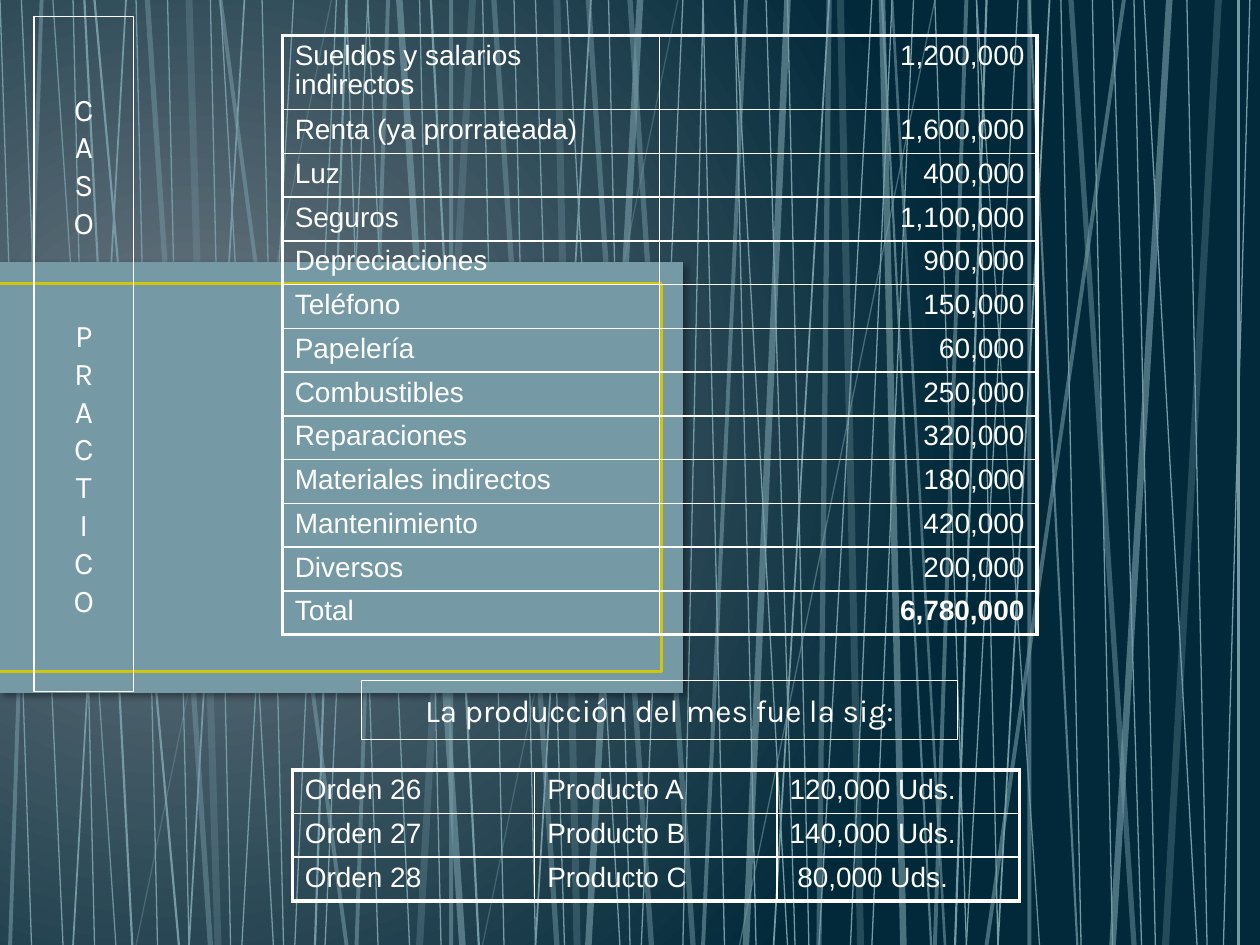
from lxml.etree import SubElement
from pptx import Presentation
from pptx.dml.color import RGBColor
from pptx.enum.shapes import MSO_CONNECTOR as Link, MSO_SHAPE as Shape
from pptx.enum.text import MSO_ANCHOR as Anchor, PP_ALIGN as Align
from pptx.oxml import parse_xml
from pptx.oxml.ns import nsdecls, qn
from pptx.util import Inches, Pt

WHITE = RGBColor(0xFF, 0xFF, 0xFF)
TEAL = RGBColor(0x75, 0x9A, 0xA5)
YELLOW = RGBColor(0xCF, 0xC6, 0x0D)
SLATE = RGBColor(0x71, 0x7C, 0x84)
NAVY = RGBColor(0x01, 0x29, 0x3A)
BLACK = RGBColor(0, 0, 0)

# (width in points, opacity in percent): top and bottom x of each strand
STRANDS = {
    (0.75, 100): [
        (2.08, 2.25), (1.75, 2.17), (2.33, 1.92), (0, 0.25), (0.17, 0.5),
        (1.67, 1.83), (0.58, 0.75), (2.67, 2.34), (2.92, 2.58), (1.08, 1.25),
        (1.33, 1.5), (4.83, 5), (4.5, 4.92), (2.75, 3), (2.92, 3.25),
        (3.33, 3.5), (5.42, 5.09), (5.58, 5.42), (4.25, 4.48), (3.83, 4),
        (4.08, 4.25), (5.83, 6.25), (6.92, 6.5), (6.25, 6.42), (7.25, 6.92),
        (7.08, 6.75), (6.08, 6.31), (5.58, 5.75), (5.83, 6), (7.42, 7.67),
        (7.75, 7.92), (8.42, 8.58), (8.67, 8.83), (9.42, 9.58), (9.08, 9.5),
        (9, 9.17), (9.92, 9.71), (8.83, 9.06), (8.08, 7.67)],
    (0.75, 90): [(0.42, 0.92), (7.75, 8.25)],
    (0.75, 56): [(7.42, 5.87)],
    (0.75, 39): [(2.63, 1.08), (5.38, 3.83)],
    (1, 100): [(1, 0.58), (1.94, 1.5), (4.69, 4.25), (6.58, 6.14),
               (8.33, 7.92)],
    (1.25, 100): [(0.75, 1.42), (0.67, 1.05), (2.75, 2.5), (3.42, 3.8),
                  (7.83, 7.58), (9.83, 9.83)],
    (1.25, 72): [(8.17, 8.55), (7, 7.39)],
    (1.5, 58): [(7.08, 7.5)],
    (2.25, 58): [(0.33, 0.08), (1.75, 2.75), (3.08, 2.83), (3.58, 3.58),
                 (5.92, 5.58), (7.67, 7.42), (8.17, 8.17), (8.92, 7.83)],
    (3, 47): [(1.17, 1.67), (3.92, 4.42), (4.67, 5.17), (8.5, 9),
              (6.58, 6.5), (5, 5.5)],
    (3.75, 63): [(5.08, 4.67), (3.17, 3.67), (9.28, 8.83), (7, 7.17),
                 (6.25, 5.92)],
    (4, 30): [(1.5, 1.73), (3.75, 3.33), (4.42, 4.58), (6.67, 6.83),
              (9.67, 9.25)],
}
COSTS = [
    ("Sueldos y salarios indirectos", "1,200,000"),
    ("Renta (ya prorrateada)", "1,600,000"),
    ("Luz", "400,000"),
    ("Seguros", "1,100,000"),
    ("Depreciaciones", "900,000"),
    ("Teléfono", "150,000"),
    ("Papelería", "60,000"),
    ("Combustibles", "250,000"),
    ("Reparaciones", "320,000"),
    ("Materiales indirectos", "180,000"),
    ("Mantenimiento", "420,000"),
    ("Diversos", "200,000"),
    ("Total", "6,780,000"),
]
ORDERS = [
    ("Orden 26", "Producto A", "120,000 Uds."),
    ("Orden 27", "Producto B", "140,000 Uds."),
    ("Orden 28", "Producto C", " 80,000 Uds."),
]

deck = Presentation()
deck.slide_width, deck.slide_height = Inches(10), Inches(7.5)
slide = deck.slides.add_slide(deck.slide_layouts[6])
shapes = slide.shapes


def draw_line(x1, y1, x2, y2, color, width, alpha=100):
    line = shapes.add_connector(
        Link.STRAIGHT, Inches(x1), Inches(y1), Inches(x2), Inches(y2))
    line.line.color.rgb = color
    line.line.width = Pt(width)
    props = line._element.spPr
    if alpha < 100:
        tint = props.find(".//" + qn("a:srgbClr"))
        SubElement(tint, qn("a:alpha"), val=str(alpha * 1000))
    SubElement(props, qn("a:effectLst"))


def draw_grid(data, left, top, width, heights):
    """Add an unfilled table with a thick frame and thin inner rules."""
    rows, cols = len(data), len(data[0])
    grid = shapes.add_table(rows, cols, Inches(left), Inches(top),
                            Inches(width), Inches(sum(heights))).table
    grid.first_row = grid.horz_banding = False
    for r, texts in enumerate(data):
        grid.rows[r].height = Inches(heights[r])
        for c, text in enumerate(texts):
            cell = grid.cell(r, c)
            cell.text = text
            par = cell.text_frame.paragraphs[0]
            par.line_spacing = 0.95
            par.font.name, par.font.size = "Arial", Pt(16)
            par.font.color.rgb = WHITE
            props = cell._tc.get_or_add_tcPr()
            edges = {"L": c == 0, "R": c == cols - 1,
                     "T": r == 0, "B": r == rows - 1}
            for side, outer in edges.items():
                rule = SubElement(props, qn("a:ln" + side),
                                  w=str(Pt(2.25 if outer else 1)))
                fill = SubElement(rule, qn("a:solidFill"))
                SubElement(fill, qn("a:srgbClr"), val=str(WHITE))
            cell.fill.background()
    return grid


# Background: radial gradient with strands over it
slide._element.cSld.insert(0, parse_xml(
    f'<p:bg {nsdecls("p", "a")}><p:bgPr><a:gradFill rotWithShape="1"><a:gsLst>'
    f'<a:gs pos="0"><a:srgbClr val="{SLATE}"/></a:gs>'
    f'<a:gs pos="100000"><a:srgbClr val="{NAVY}"/></a:gs></a:gsLst>'
    '<a:path path="circle">'
    '<a:fillToRect l="15000" t="50000" r="85000" b="60000"/></a:path>'
    '</a:gradFill><a:effectLst/></p:bgPr></p:bg>'))
for (width, alpha), ends in STRANDS.items():
    for x1, x2 in ends:
        draw_line(x1, 0, x2, 7.5, TEAL, width, alpha)

# Panel with its yellow trim
panel = shapes.add_shape(Shape.RECTANGLE, 0, Inches(2.08),
                         Inches(5.42), Inches(3.42))
panel.fill.solid()
panel.fill.fore_color.rgb = TEAL
panel.line.fill.background()
panel._element.spPr.append(parse_xml(
    f'<a:effectLst {nsdecls("a")}><a:outerShdw blurRad="{Pt(4)}" '
    f'dist="{Pt(3)}" dir="2700000" algn="tl" rotWithShape="0">'
    f'<a:srgbClr val="{BLACK}"><a:alpha val="40000"/></a:srgbClr>'
    '</a:outerShdw></a:effectLst>'))
for trim in [(0, 2.25, 5.25, 2.25), (0, 5.33, 5.25, 5.33),
             (5.25, 2.25, 5.25, 5.33)]:
    draw_line(*trim, YELLOW, 1.5)

# Tables
costs = draw_grid(COSTS, 2.24, 0.28, 5.99, [0.59] + [4.17 / 12] * 12)
for row in costs.rows:
    row.cells[1].text_frame.paragraphs[0].alignment = Align.RIGHT
costs.cell(len(COSTS) - 1, 1).text_frame.paragraphs[0].font.bold = True
draw_grid(ORDERS, 2.32, 6.11, 5.77, [1.04 / 3] * 3)

# Framed captions
for text, left, top, width, height in [
        ("La producción del mes fue la sig:", 2.87, 5.4, 4.73, 0.47),
        ("\n".join("CASOPRACTICO"), 0.27, 0.13, 0.79, 5.36)]:
    box = shapes.add_shape(Shape.RECTANGLE, Inches(left), Inches(top),
                           Inches(width), Inches(height))
    box.shadow.inherit = False
    box.fill.background()
    box.line.color.rgb = WHITE
    box.line.width = Pt(0.75)
    frame = box.text_frame
    frame.word_wrap = False
    frame.vertical_anchor = Anchor.MIDDLE
    frame.text = text
    for par in frame.paragraphs:
        par.alignment = Align.CENTER
        par.font.name, par.font.size = "Karla", Pt(18)
        par.font.color.rgb = WHITE
frame.paragraphs[len("CASO")].space_before = Pt(43)

deck.save("out.pptx")
